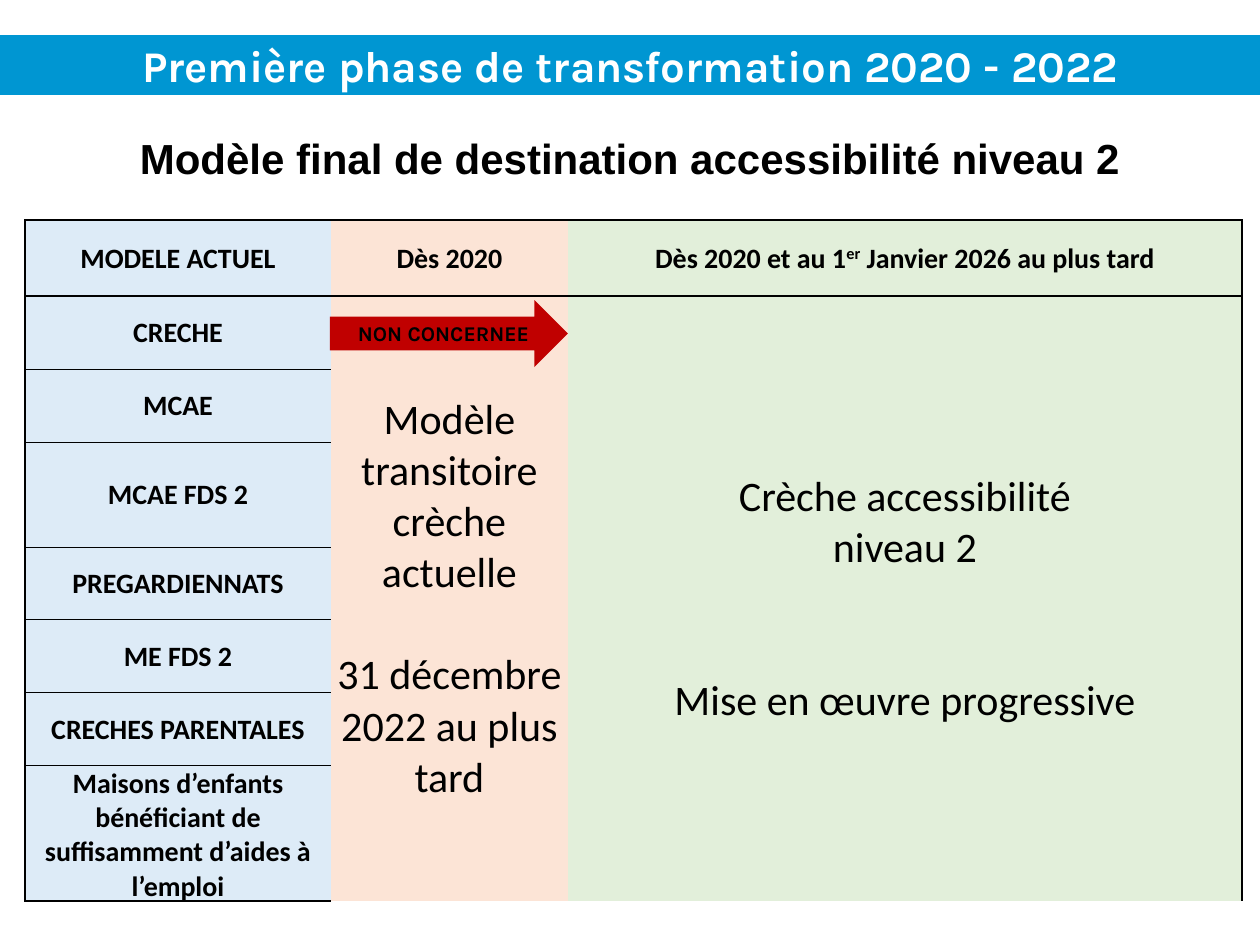
import pptx
import pptx.dml.color
import pptx.enum.shapes
import pptx.enum.text
import pptx.oxml
import pptx.oxml.ns
import pptx.util

EMU_PER_PX = 914400 / 126
CENTER = pptx.enum.text.PP_ALIGN.CENTER
LEFT = pptx.enum.text.PP_ALIGN.LEFT
MIDDLE = pptx.enum.text.MSO_ANCHOR.MIDDLE


def px(length):
    return pptx.util.Emu(round(length * EMU_PER_PX))


def color(value):
    return pptx.dml.color.RGBColor.from_string(value)


class SlideBuilder:
    """Holds the style and the current slide."""

    black = "000000"
    heading_font, table_font = "Karla", "Calibri"
    blue, red = "0096D2", "C00000"
    column_fills = ("DDEBF7", "FCE4D6", "E2EFDA")

    def __init__(self, presentation):
        self.slide = presentation.slides.add_slide(presentation.slide_layouts[5])

    def style(self, paragraph, font, size, ink=black, bold=True, align=CENTER):
        paragraph.alignment = align
        paragraph.font.name = font
        paragraph.font.size = pptx.util.Pt(size)
        paragraph.font.bold = bold
        paragraph.font.color.rgb = color(ink)

    def title(self, text, left, top, width, height):
        shape = self.slide.shapes.title
        shape.left, shape.top, shape.width, shape.height = map(px, (left, top, width, height))
        shape.fill.solid()
        shape.fill.fore_color.rgb = color(self.blue)
        frame = shape.text_frame
        frame.text = text
        frame.vertical_anchor = MIDDLE
        frame.auto_size = pptx.enum.text.MSO_AUTO_SIZE.NONE
        self.style(frame.paragraphs[0], self.heading_font, 25, "FFFFFF")

    def subtitle(self, text, left, top, width, height):
        shape = self.slide.shapes.add_textbox(*map(px, (left, top, width, height)))
        shape.text_frame.word_wrap = True
        shape.text_frame.text = text
        self.style(shape.text_frame.paragraphs[0], "Arial", 24)

    def arrow(self, text, left, top, width, height):
        shape = self.slide.shapes.add_shape(
            pptx.enum.shapes.MSO_SHAPE.RIGHT_ARROW, *map(px, (left, top, width, height)))
        shape.shadow.inherit = False
        shape.fill.solid()
        shape.fill.fore_color.rgb = color(self.red)
        shape.line.fill.background()
        frame = shape.text_frame
        frame.text = text
        frame.word_wrap = True
        frame.vertical_anchor = MIDDLE
        frame.margin_left = px(28)
        frame.margin_right = frame.margin_top = frame.margin_bottom = 0
        self.style(frame.paragraphs[0], self.heading_font, 12, align=LEFT)

    def table(self, left, top, columns, rows):
        frame = self.slide.shapes.add_table(
            len(rows), len(columns), px(left), px(top), px(sum(columns)), px(sum(rows)))
        table = frame.table
        table.first_row = table.horz_banding = False
        for column, width in zip(table.columns, columns):
            column.width = px(width)
        for row, height in zip(table.rows, rows):
            row.height = px(height)
        last_row, last_column = len(rows) - 1, len(columns) - 1
        for i in range(len(rows)):
            for j, fill in enumerate(self.column_fills):
                cell = table.cell(i, j)
                inner = 0.5 if j == 0 else 0
                self.borders(cell, {
                    "L": 1 if j == 0 else 0,
                    "R": 1 if j == last_column else 0,
                    "T": 1 if i < 2 else inner,
                    "B": 1 if i in (0, last_row) else inner,
                })
                cell.fill.solid()
                cell.fill.fore_color.rgb = color(fill)
                cell.vertical_anchor = MIDDLE
                cell.margin_left = cell.margin_right = cell.margin_top = px(1)
                cell.margin_bottom = 0
        return table

    def borders(self, cell, widths):
        properties = cell._tc.get_or_add_tcPr()
        for side, width in widths.items():
            paint = f'<a:solidFill><a:srgbClr val="{self.black}"/></a:solidFill>' if width else "<a:noFill/>"
            properties.append(pptx.oxml.parse_xml(
                f'<a:ln{side} {pptx.oxml.ns.nsdecls("a")} w="{pptx.util.Pt(width)}">{paint}</a:ln{side}>'))

    def cell_text(self, cell, lines, size=16, bold=True, gaps=None):
        """Fill a cell; gaps maps a paragraph index to its space before, in points."""
        cell.text = "\n".join(lines)
        for index, paragraph in enumerate(cell.text_frame.paragraphs):
            self.style(paragraph, self.table_font, size, bold=bold)
            if gaps and index in gaps:
                paragraph.space_before = pptx.util.Pt(gaps[index])


def main():
    presentation = pptx.Presentation()
    presentation.slide_width, presentation.slide_height = px(1260), px(945)
    builder = SlideBuilder(presentation)

    # Headings
    builder.title("Première phase de transformation 2020 - 2022", 0, 35, 1260, 60)
    builder.subtitle("Modèle final de destination accessibilité niveau 2", 0, 126, 1260, 63)

    # Table grid
    table = builder.table(25, 220, (306, 237, 674), (76, 73, 73, 105, 73, 73, 73, 135))

    # Current models, one per row
    models = ("MODELE ACTUEL", "CRECHE", "MCAE", "MCAE FDS 2", "PREGARDIENNATS", "ME FDS 2",
              "CRECHES PARENTALES",
              "Maisons d’enfants bénéficiant de suffisamment d’aides à l’emploi")
    for row, model in enumerate(models):
        builder.cell_text(table.cell(row, 0), [model])

    # Column headers, the last with a superscript
    builder.cell_text(table.cell(0, 1), ["Dès 2020"])
    deadline = table.cell(0, 2)
    builder.cell_text(deadline, ["Dès 2020 et au 1"])
    paragraph = deadline.text_frame.paragraphs[0]
    ordinal, remainder = paragraph.add_run(), paragraph.add_run()
    ordinal.text, remainder.text = "er", " Janvier 2026 au plus tard"
    ordinal._r.get_or_add_rPr().set("baseline", "30000")

    # Merged phase cells
    phases = (
        (1, ["Modèle transitoire crèche", "actuelle", "31 décembre 2022 au plus tard"], {2: 29}),
        (2, ["Crèche accessibilité", "niveau 2", "Mise en œuvre progressive"], {2: 58}),
    )
    for column, lines, gaps in phases:
        cell = table.cell(1, column)
        cell.merge(table.cell(len(models) - 1, column))
        builder.cell_text(cell, lines, size=24, bold=False, gaps=gaps)

    # Arrow over the nursery row
    builder.arrow("NON CONCERNEE", 330, 300, 238, 67)

    presentation.save("out.pptx")


if __name__ == "__main__":
    main()
